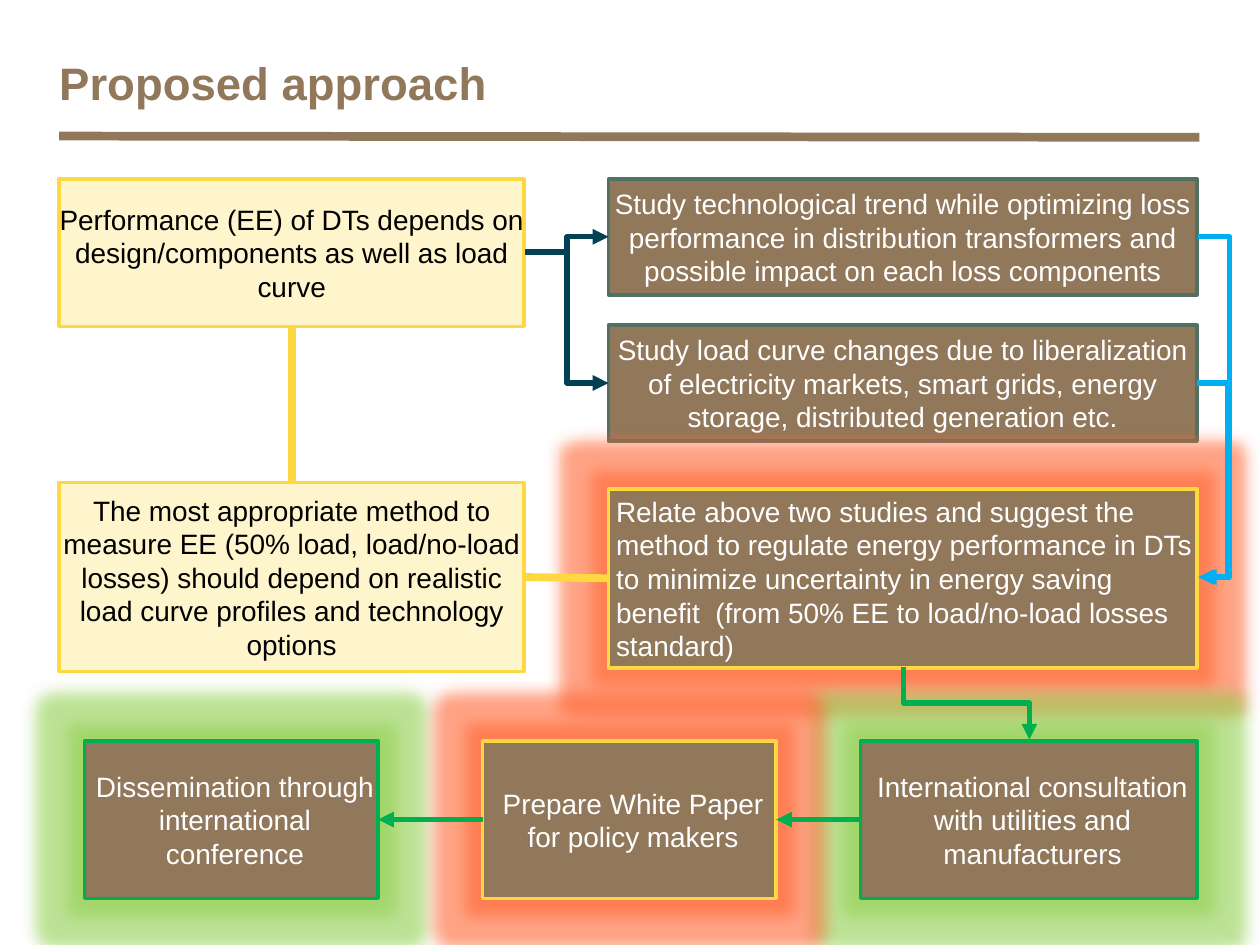
import pptx
import pptx.dml.color
import pptx.enum.shapes
import pptx.enum.text
import pptx.oxml
import pptx.oxml.ns
import pptx.util
from dataclasses import dataclass

Inches = pptx.util.Inches
Pt = pptx.util.Pt
Kind = pptx.enum.shapes.MSO_CONNECTOR
Align = pptx.enum.text.PP_ALIGN
Anchor = pptx.enum.text.MSO_ANCHOR
SPACE = pptx.oxml.ns.nsdecls("a")


@dataclass
class Theme:
    font: str = "Arial"
    head: int = 26
    body: int = 16
    brown: str = "91785B"
    cream: str = "FFF5CC"
    gold: str = "FED840"
    moss: str = "527162"
    green: str = "00B050"
    teal: str = "004153"
    blue: str = "00B0F0"
    black: str = "000000"
    white: str = "FFFFFF"
    lime: str = "92D050"
    coral: str = "FF6633"


theme = Theme()
rgb = pptx.dml.color.RGBColor.from_string


def write(shape, text, size=theme.body, color=theme.white, bold=False,
          align=Align.CENTER, anchor=Anchor.MIDDLE, indent=0):
    frame = shape.text_frame
    frame.word_wrap = True
    frame.vertical_anchor = anchor
    frame.margin_left = frame.margin_right = 0
    frame.margin_top = frame.margin_bottom = 0
    para = frame.paragraphs[0]
    para.alignment = align
    if indent:
        props = para._p.get_or_add_pPr()
        props.set("marL", str(Inches(indent)))
        props.set("indent", "0")
    run = para.add_run()
    run.text = text
    run.font.name = theme.font
    run.font.size = Pt(size)
    run.font.bold = bold
    run.font.color.rgb = rgb(color)


def link(kind, ends, color, width, arrow=True, bend=None):
    line = slide.shapes.add_connector(kind, *map(Inches, ends))
    line.line.color.rgb = rgb(color)
    line.line.width = Pt(width)
    if arrow:
        line.line._get_or_add_ln().append(
            pptx.oxml.parse_xml(f'<a:tailEnd {SPACE} type="triangle"/>'))
    props = line._element.spPr
    props.append(pptx.oxml.parse_xml(f"<a:effectLst {SPACE}/>"))
    if bend is not None:
        geom = props.find(pptx.oxml.ns.qn("a:prstGeom"))
        guides = geom.get_or_add_avLst()
        guides.append(pptx.oxml.parse_xml(
            f'<a:gd {SPACE} name="adj1" fmla="val {round(bend * 100000)}"/>'))
    return line


deck = pptx.Presentation()
deck.slide_width = Inches(10)
deck.slide_height = Inches(7.5)
slide = deck.slides.add_slide(deck.slide_layouts[6])

link(Kind.STRAIGHT, (0.47, 1.08, 9.52, 1.09), theme.brown, 5, arrow=False)
title = slide.shapes.add_textbox(
    Inches(0.47), Inches(0.44), Inches(8.48), Inches(0.58))
write(title, "Proposed approach", size=theme.head, color=theme.brown,
      bold=True, align=Align.LEFT, anchor=Anchor.TOP)

cream = dict(color=theme.black)
inset = dict(indent=0.06)
left = dict(indent=0.06, align=Align.LEFT)
specs = [
    ("load", (0.47, 1.42, 3.69, 1.17), theme.cream, theme.gold, None, cream,
     "Performance (EE) of DTs depends on design/components as well as load curve"),
    ("trend", (4.83, 1.42, 4.67, 0.92), theme.brown, theme.moss, None, {},
     "Study technological trend while optimizing loss performance in distribution "
     "transformers and possible impact on each loss components"),
    ("curve", (4.83, 2.58, 4.67, 0.92), theme.brown, theme.moss, None, {},
     "Study load curve changes due to liberalization of electricity markets, "
     "smart grids, energy storage, distributed generation etc."),
    ("method", (0.47, 3.83, 3.69, 1.5), theme.cream, theme.gold, None, cream,
     "The most appropriate method to measure EE (50% load, load/no-load losses) "
     "should depend on realistic load curve profiles and technology options"),
    ("relate", (4.83, 3.88, 4.67, 1.42), theme.brown, theme.gold, theme.coral, left,
     "Relate above two studies and suggest the method to regulate energy "
     "performance in DTs to minimize uncertainty in energy saving benefit  "
     "(from 50% EE to load/no-load losses standard)"),
    ("consult", (6.83, 5.88, 2.67, 1.25), theme.brown, theme.green, theme.lime, inset,
     "International consultation with utilities and manufacturers"),
    ("spread", (0.67, 5.88, 2.33, 1.25), theme.brown, theme.green, theme.lime, inset,
     "Dissemination through international conference"),
    ("paper", (3.83, 5.88, 2.33, 1.25), theme.brown, theme.gold, theme.coral, inset,
     "Prepare White Paper for policy makers"),
]
boxes = {}
for name, place, fill, edge, glow, style, text in specs:
    box = slide.shapes.add_shape(
        pptx.enum.shapes.MSO_SHAPE.RECTANGLE, *map(Inches, place))
    box.shadow.inherit = False
    box.fill.solid()
    box.fill.fore_color.rgb = rgb(fill)
    box.line.color.rgb = rgb(edge)
    box.line.width = Pt(2)
    if glow:
        effects = box._element.spPr.find(pptx.oxml.ns.qn("a:effectLst"))
        effects.append(pptx.oxml.parse_xml(
            f'<a:glow {SPACE} rad="{Pt(18)}"><a:srgbClr val="{glow}">'
            '<a:alpha val="60000"/></a:srgbClr></a:glow>'))
    write(box, text, **style)
    boxes[name] = box

bends = [
    ((4.17, 2, 4.83, 1.88), theme.teal, 0.5),
    ((4.17, 2, 4.83, 3.04), theme.teal, 0.5),
    ((9.51, 1.88, 9.53, 4.58), theme.blue, 12.5),
    ((9.5, 3.04, 9.51, 4.58), theme.blue, 25),
]
for ends, color, bend in bends:
    link(Kind.ELBOW, ends, color, 3, bend=bend)

drop = link(Kind.ELBOW, (7.96, 5.08, 7.38, 6.08), theme.green, 3, bend=0.5)
drop._element.spPr.find(pptx.oxml.ns.qn("a:xfrm")).set("rot", "16200000")

joins = [
    ("method", 3, "relate", 1, theme.gold, 4.5, False),
    ("load", 2, "method", 0, theme.gold, 4.5, False),
    ("consult", 1, "paper", 3, theme.green, 3, True),
    ("paper", 1, "spread", 3, theme.green, 3, True),
]
for start, out, end, into, color, width, arrow in joins:
    line = link(Kind.STRAIGHT, (0, 0, 0, 0), color, width, arrow)
    line.begin_connect(boxes[start], out)
    line.end_connect(boxes[end], into)

deck.save("out.pptx")
